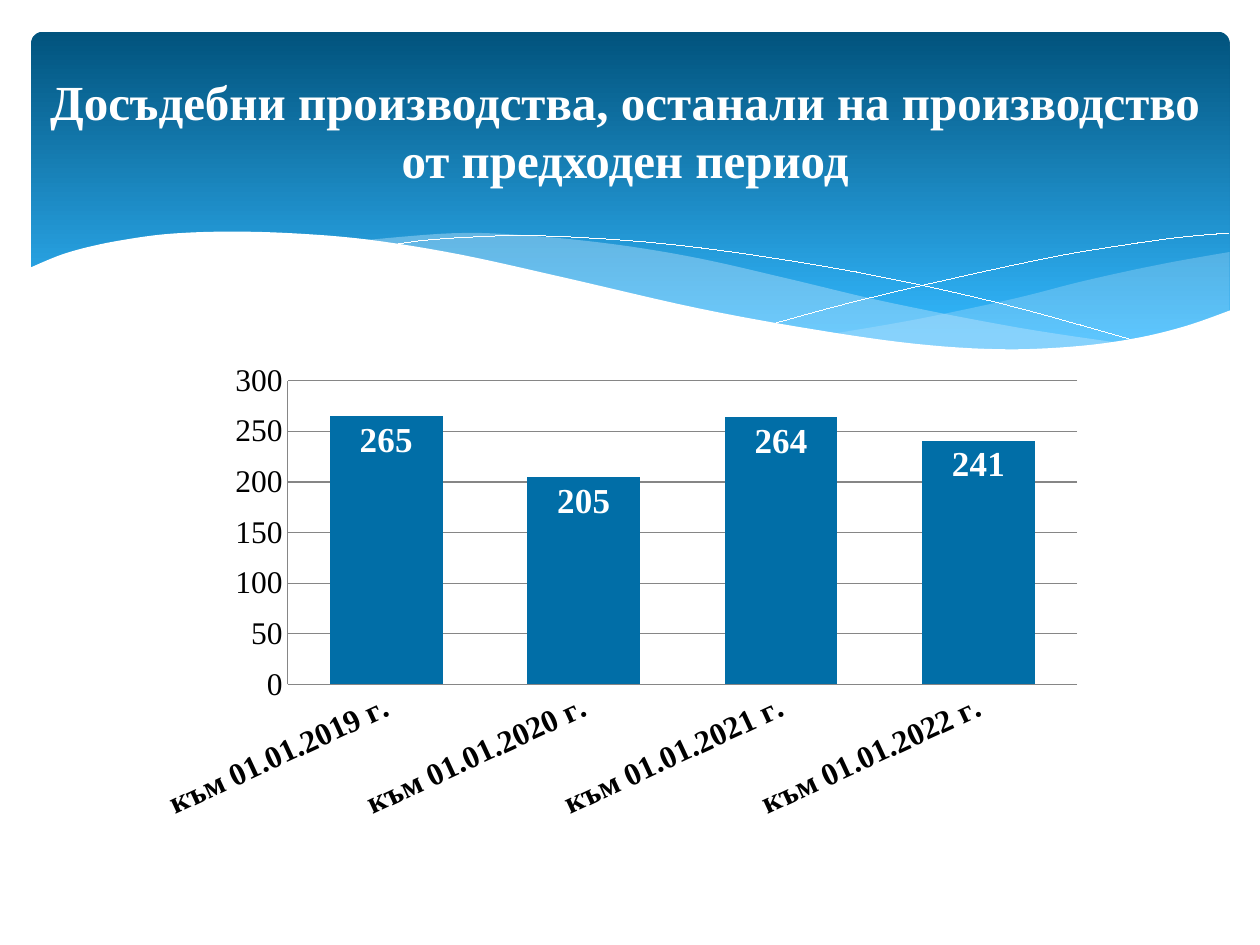
from dataclasses import dataclass
from typing import Optional

import pptx
import pptx.chart.data
import pptx.dml.color
import pptx.enum.chart
import pptx.enum.shapes
import pptx.enum.text
import pptx.oxml
import pptx.oxml.ns
import pptx.util
from pptx.util import Cm

RGBColor = pptx.dml.color.RGBColor
WHITE = RGBColor(0xFF, 0xFF, 0xFF)
BLACK = RGBColor(0, 0, 0)
GRAY = RGBColor(0x86, 0x86, 0x86)
DEEP_BLUE = RGBColor(0x01, 0x53, 0x7D)
SKY_BLUE = RGBColor(0x33, 0xB8, 0xFE)
PALE_BLUE = RGBColor(0xC6, 0xE7, 0xFC)
BAR_BLUE = RGBColor(0x01, 0x6E, 0xA7)
SERIF = "Times New Roman"
STEPS = 6  # straight pieces between two knots of a curve
LABEL_ANGLE = -25  # degrees, rising to the right

Point = tuple[float, float]


@dataclass
class Wave:
    """Curves through knots in cm; corners are joined by straight lines."""
    curves: list[list[Point]]
    corners: tuple[Point, ...] = ()
    fill: Optional[RGBColor] = None  # without a fill the wave is a thin line
    opacity: int = 100


WAVES = [
    Wave([[(24.79, 5.08), (23.39, 5.33), (21.87, 5.66), (20.45, 6.02), (18.52, 6.43),
           (16.79, 6.73)],
          [(16.79, 6.73), (18.59, 6.96), (20.12, 7.04), (21.44, 7.04), (22.58, 6.93),
           (23.57, 6.71), (24.46, 6.4), (24.79, 6.27)]], fill=PALE_BLUE, opacity=29),
    Wave([[(22.68, 6.93), (20.5, 6.6), (17.93, 6.1), (15.98, 5.64), (14.1, 5.21),
           (12.42, 4.93), (10.67, 4.75), (9.17, 4.7), (7.26, 4.85)],
          [(7.26, 4.85), (8.69, 5.05), (10.26, 5.36), (11.4, 5.64), (13.46, 6.1),
           (15.27, 6.48), (16.89, 6.76), (18.34, 6.96), (19.63, 7.04), (20.78, 7.06),
           (21.77, 7.04), (22.68, 6.93)]], fill=PALE_BLUE, opacity=40),
    Wave([[(7.85, 4.95), (8.5, 4.85), (9.5, 4.78), (10.57, 4.75), (11.91, 4.8),
           (13.54, 4.93), (15.44, 5.18), (17.65, 5.56), (20.19, 6.12), (23.04, 6.91)]]),
    Wave([[(15.57, 6.53), (17.07, 6.12), (19, 5.66), (21.23, 5.18), (22.73, 4.93),
           (23.83, 4.78), (24.77, 4.7)]]),
    Wave([[(24.82, 6.25), (23.88, 6.58), (22.83, 6.83), (21.59, 6.99), (20.14, 7.04),
           (18.44, 6.93), (16.46, 6.65), (14.1, 6.22), (11.35, 5.59), (9.27, 5.13),
           (7.42, 4.83), (5.84, 4.7), (4.5, 4.67), (3.35, 4.72), (2.41, 4.85),
           (1.7, 5), (1.17, 5.16), (0.58, 5.41)]],
         corners=((0.58, 8.36), (24.82, 8.36)), fill=WHITE),
]


def smooth_curve(knots: list[Point]) -> list[Point]:
    """Sample a Catmull-Rom curve through the knots."""
    padded = [knots[0], *knots, knots[-1]]
    points = [knots[0]]
    for a, b, c, d in zip(padded, padded[1:], padded[2:], padded[3:]):
        for step in range(1, STEPS + 1):
            t = step / STEPS
            x, y = (
                (2 * q + (r - p) * t + (2 * p - 5 * q + 4 * r - s) * t**2
                 + (3 * q - p - 3 * r + s) * t**3) / 2
                for p, q, r, s in zip(a, b, c, d)
            )
            points.append((x, y))
    return points


def draw_wave(slide, wave: Wave) -> None:
    points = [point for curve in wave.curves for point in smooth_curve(curve)]
    points.extend(wave.corners)
    (start_x, start_y), *rest = [(Cm(x), Cm(y)) for x, y in points]
    builder = slide.shapes.build_freeform(start_x, start_y)
    builder.add_line_segments(rest, close=wave.fill is not None)
    shape = builder.convert_to_shape()
    shape.shadow.inherit = False
    if wave.fill is None:
        shape.fill.background()
        shape.line.color.rgb = WHITE
        shape.line.width = pptx.util.Emu(1)  # hairline
        return
    shape.fill.solid()
    shape.fill.fore_color.rgb = wave.fill
    shape.line.fill.background()
    if wave.opacity < 100:
        color = shape.element.spPr.find(".//" + pptx.oxml.ns.qn("a:srgbClr"))
        alpha = pptx.oxml.parse_xml(
            f'<a:alpha {pptx.oxml.ns.nsdecls("a")} val="{wave.opacity * 1000}"/>')
        color.append(alpha)


def draw_banner(slide) -> None:
    banner = slide.shapes.add_shape(
        pptx.enum.shapes.MSO_SHAPE.ROUNDED_RECTANGLE,
        Cm(0.63), Cm(0.64), Cm(24.16), Cm(6.86))
    banner.adjustments[0] = 0.034
    banner.shadow.inherit = False
    banner.line.fill.background()
    banner.fill.gradient()
    banner.fill.gradient_angle = 270
    stops = banner.fill.gradient_stops
    for stop, color, position in zip(stops, (DEEP_BLUE, SKY_BLUE), (0, 0.9)):
        stop.color.rgb = color
        stop.position = position
    for wave in WAVES:
        draw_wave(slide, wave)


def write_title(slide, text: str) -> None:
    title = slide.shapes.title
    title.left, title.top, title.width, title.height = Cm(0.5), Cm(0.32), Cm(24.2), Cm(4.6)
    title.element.getparent().append(title.element)  # bring in front of the banner
    frame = title.text_frame
    frame.word_wrap = True
    frame.vertical_anchor = pptx.enum.text.MSO_ANCHOR.MIDDLE
    paragraph = frame.paragraphs[0]
    paragraph.alignment = pptx.enum.text.PP_ALIGN.CENTER
    run = paragraph.add_run()
    run.text = text
    set_font(run.font, 28, WHITE, bold=True)


def set_font(font, size: int, color: RGBColor, bold: bool = False, name: str = SERIF) -> None:
    font.name = name
    font.size = pptx.util.Pt(size)
    font.bold = bold
    font.color.rgb = color


def draw_chart(slide) -> None:
    data = pptx.chart.data.CategoryChartData()
    data.categories = [f"към 01.01.{year} г." for year in range(2019, 2023)]
    data.add_series("Series 1", (265, 205, 264, 241))
    chart = slide.shapes.add_chart(
        pptx.enum.chart.XL_CHART_TYPE.COLUMN_CLUSTERED,
        Cm(2.9), Cm(7.14), Cm(19.2), Cm(9.6), data).chart
    chart.has_legend = False
    chart.has_title = False
    set_font(chart.font, 18, BLACK, name="Calibri")

    # Axes, with slanted category labels
    for axis, bold in ((chart.category_axis, True), (chart.value_axis, False)):
        axis.major_tick_mark = pptx.enum.chart.XL_TICK_MARK.NONE
        axis.format.line.color.rgb = GRAY
        set_font(axis.tick_labels.font, 18, BLACK, bold)
    chart.value_axis.major_gridlines.format.line.color.rgb = GRAY
    qn = pptx.oxml.ns.qn
    category_axis = chart.element.find(".//" + qn("c:catAx"))
    label_body = category_axis.find(qn("c:txPr")).find(qn("a:bodyPr"))
    label_body.set("rot", str(LABEL_ANGLE * 60000))
    label_body.set("vert", "horz")

    # Columns and their values
    plot = chart.plots[0]
    plot.vary_by_categories = False
    plot.gap_width = 75
    plot.overlap = 40
    series = plot.series[0]
    series.format.fill.solid()
    series.format.fill.fore_color.rgb = BAR_BLUE
    labels = series.data_labels
    labels.show_value = True
    labels.position = pptx.enum.chart.XL_LABEL_POSITION.INSIDE_END
    set_font(labels.font, 20, WHITE, bold=True)


def main() -> None:
    presentation = pptx.Presentation()
    presentation.slide_width, presentation.slide_height = Cm(25.4), Cm(19.05)
    slide = presentation.slides.add_slide(presentation.slide_layouts[5])
    draw_banner(slide)
    write_title(slide, "Досъдебни производства, останали на производство от предходен период")
    draw_chart(slide)
    presentation.save("out.pptx")


if __name__ == "__main__":
    main()
